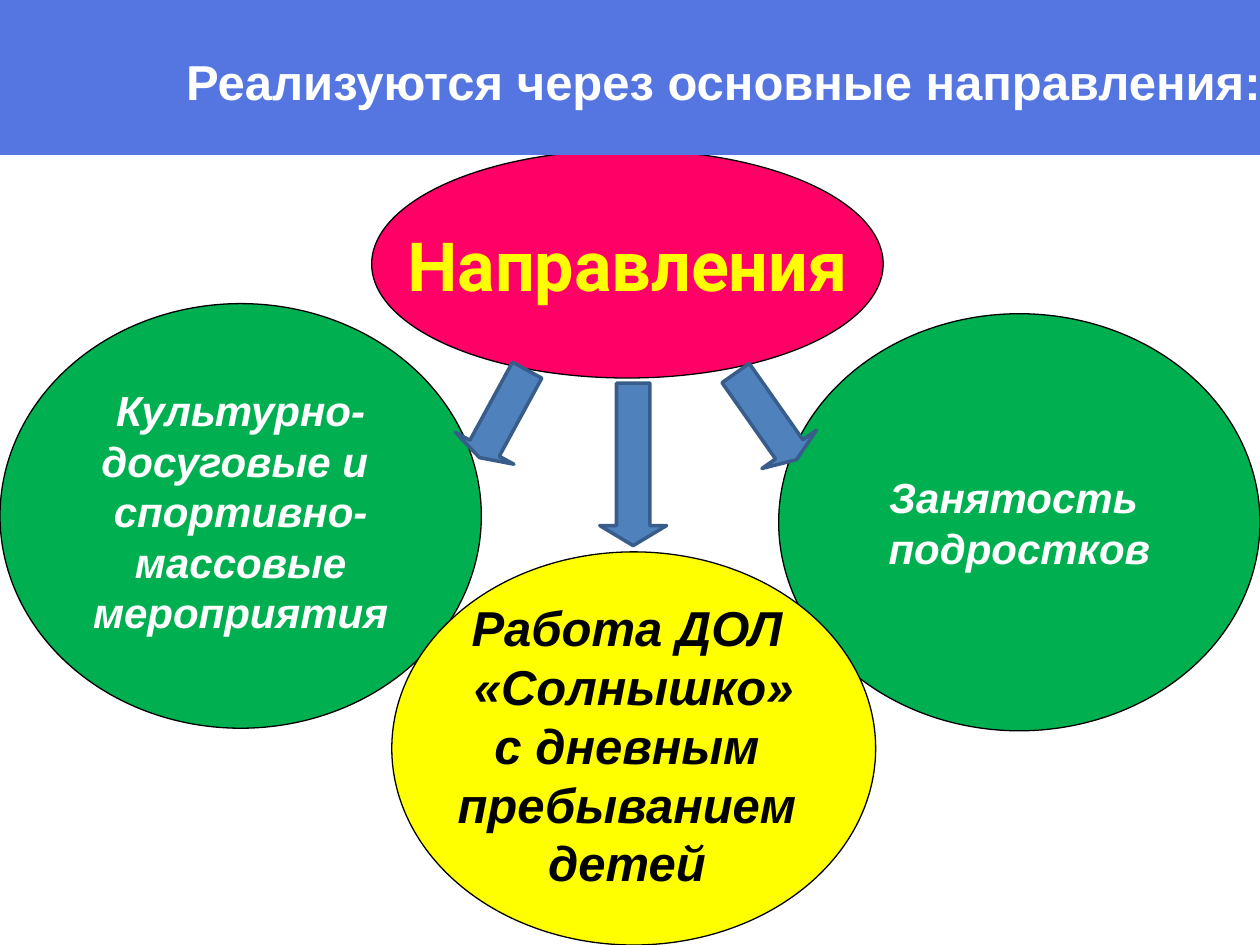
from pptx import Presentation
from pptx.dml.color import RGBColor
from pptx.enum.shapes import MSO_SHAPE
from pptx.enum.text import MSO_ANCHOR, PP_ALIGN
from pptx.util import Inches, Pt

OVAL, BAR = MSO_SHAPE.OVAL, MSO_SHAPE.RECTANGLE
LEFT, RIGHT = MSO_SHAPE.LEFT_ARROW, MSO_SHAPE.RIGHT_ARROW
MIDDLE, CENTER = MSO_ANCHOR.MIDDLE, PP_ALIGN.CENTER
WIDTH, HEIGHT = 10, 7.5

TITLE = "Реализуются через основные направления:"

# Ovals: box, fill, text colour, size, italic, upward text shift, lines of (text, font) runs
OVALS = [
    ((2.95, 1.19, 4.06, 1.81), "FF0066", "FFFF00", 40, False, 0,
     [[("Н", "Arial"), ("аправления", "Roboto")]]),
    ((6.18, 2.49, 3.82, 3.31), "00B050", "FFFFFF", 24, True, 0,
     [[("Занятость ", "Arial")], [("подростков", "Arial")]]),
    ((0, 2.41, 3.82, 3.37), "00B050", "FFFFFF", 24, True, 0.04,
     [[(line, "Arial")] for line in
      ("Культурно-", "досуговые и ", "спортивно-", "массовые", "мероприятия")]),
    ((3.11, 4.38, 3.84, 3.12), "FFFF00", "000000", 28, True, 0.03,
     [[(line, "Arial")] for line in
      ("Работа ДОЛ ", "«Солнышко»", "с дневным ", "пребыванием ", "детей ")]),
]

# Arrows: preset, box, rotation, head length ratio
ARROWS = [
    (LEFT, (3.6, 3.02, 0.79, 0.53), 298.6, 0.16),
    (RIGHT, (4.38, 3.42, 1.29, 0.53), 90, 0.3),
    (RIGHT, (5.66, 3.04, 0.84, 0.53), 54.9, 0.19),
]


def rgb(value):
    return RGBColor.from_string(value)


def add_figure(preset, box, fill, line=None, line_width=0.75):
    figure = slide.shapes.add_shape(preset, *map(Inches, box))
    figure.shadow.inherit = False
    figure.fill.solid()
    figure.fill.fore_color.rgb = rgb(fill)
    if line:
        figure.line.color.rgb = rgb(line)
        figure.line.width = Pt(line_width)
    else:
        figure.line.fill.background()
    return figure


def add_run(paragraph, text, font, size, color, italic=False):
    run = paragraph.add_run()
    run.text = text
    run.font.name = font
    run.font.size = Pt(size)
    run.font.bold = True
    run.font.italic = italic
    run.font.color.rgb = rgb(color)


prs = Presentation()
prs.slide_width, prs.slide_height = Inches(WIDTH), Inches(HEIGHT)
slide = prs.slides.add_slide(prs.slide_layouts[6])

# Directions
for box, fill, color, size, italic, shift, lines in OVALS:
    frame = add_figure(OVAL, box, fill, "000000").text_frame
    frame.word_wrap = False
    frame.vertical_anchor = MIDDLE
    frame.margin_top = 0
    frame.margin_bottom = Inches(2 * shift)
    for index, runs in enumerate(lines):
        paragraph = frame.add_paragraph() if index else frame.paragraphs[0]
        paragraph.alignment = CENTER
        for text, font in runs:
            add_run(paragraph, text, font, size, color, italic)

# Arrows from the centre to each direction
for preset, box, rotation, head in ARROWS:
    arrow = add_figure(preset, box, "4F81BD", "385D8A", 2)
    arrow.rotation = rotation
    arrow.adjustments[0] = 0.5
    arrow.adjustments[1] = head

# Title band
add_figure(BAR, (0, 0, WIDTH, 1.23), "5576E1")
title = slide.shapes.add_textbox(*map(Inches, (1.38, 0.36, 8.86, 0.57))).text_frame
title.word_wrap = True
add_run(title.paragraphs[0], TITLE, "Arial", 28, "FFFFFF")

prs.save("out.pptx")
